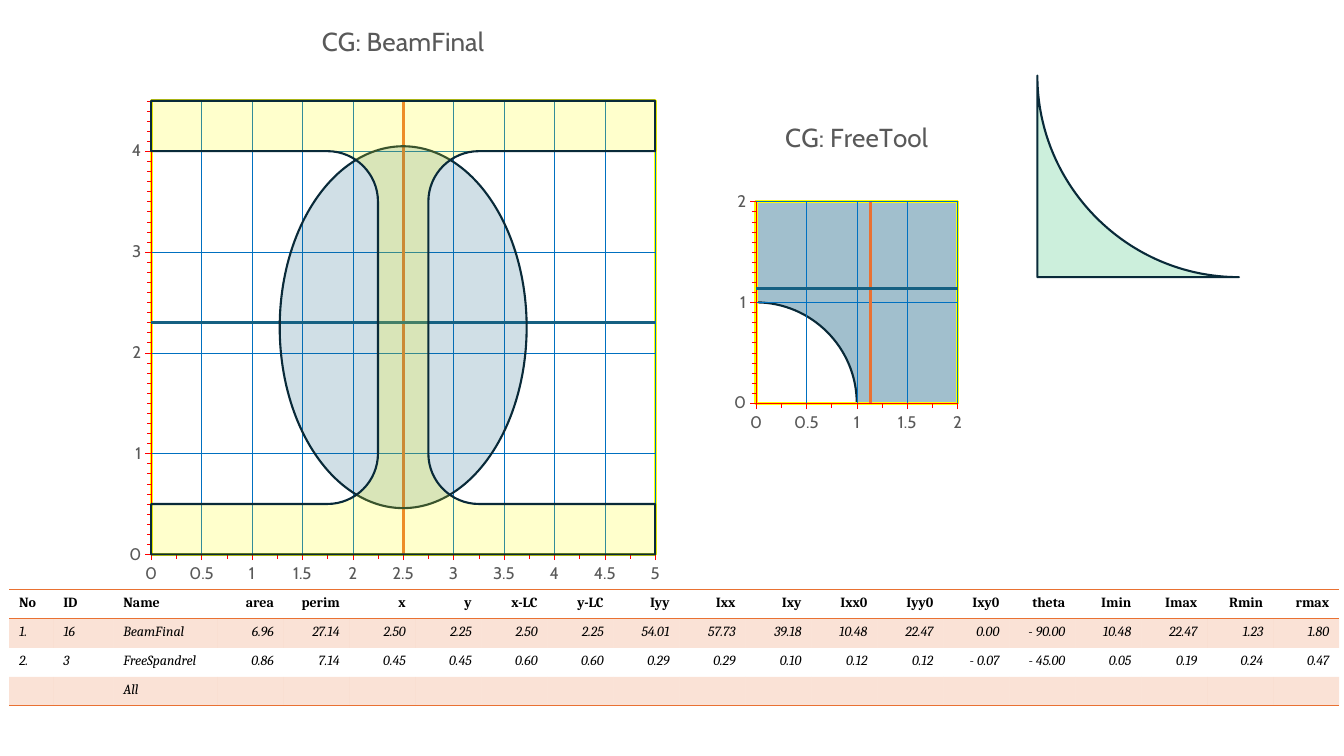
from dataclasses import dataclass
from typing import Any, NamedTuple

from lxml import etree
from pptx import Presentation
from pptx.chart.data import XyChartData
from pptx.dml.color import RGBColor
from pptx.enum.chart import XL_CHART_TYPE, XL_TICK_MARK
from pptx.enum.shapes import MSO_SHAPE
from pptx.enum.text import PP_ALIGN
from pptx.oxml import parse_xml
from pptx.oxml.ns import nsdecls, qn
from pptx.util import Pt

SCATTER = XL_CHART_TYPE.XY_SCATTER_LINES_NO_MARKERS
TICK_OUT = XL_TICK_MARK.OUTSIDE
ELLIPSE = MSO_SHAPE.OVAL
RIGHT = PP_ALIGN.RIGHT

UNIT = 72  # points per plotted unit, and the margin around each plot
ROUNDNESS = 0.55  # share of the way to the corner for a quarter circle's handles
TEAL, ORANGE, INK, GREY = "156082", "E97132", "092A39", "595959"
YELLOW, GREEN, BLUE, RED, BLACK = "FFFF00", "00B050", "0070C0", "FF0000", "000000"
NO_STYLE = "{2D5ABB26-0587-4C30-8999-92F81FD0307C}"


class Point(NamedTuple):
    x: float
    y: float


class Quarter(NamedTuple):
    """A quarter circle that ends at end and bends towards corner."""
    corner: Point
    end: Point


@dataclass
class Plot:
    title: str
    left: float
    top: float
    x_max: float
    y_max: float
    centroid: Point
    title_at: Point


@dataclass
class Outline:
    start: Point
    steps: list[Point | Quarter]
    color: str
    opacity: int


PLOTS = [
    Plot("CG: BeamFinal", 108, 72, 5, 4.5, Point(2.5, 2.3), Point(190.5, 13)),
    Plot("CG: FreeTool", 540, 144, 2, 2, Point(1.14, 1.14), Point(89.5, 9.5)),
]
OUTLINES = [
    Outline(Point(108, 72), [
        Point(468, 72), Point(468, 108), Point(342, 108),
        Quarter(Point(306, 108), Point(306, 144)), Point(306, 324),
        Quarter(Point(306, 360), Point(342, 360)), Point(468, 360),
        Point(468, 396), Point(108, 396), Point(108, 360), Point(234, 360),
        Quarter(Point(270, 360), Point(270, 324)), Point(270, 144),
        Quarter(Point(270, 108), Point(234, 108)), Point(108, 108),
    ], YELLOW, 20),
    Outline(Point(741, 54), [Quarter(Point(741, 198), Point(885, 198)), Point(741, 198)],
            GREEN, 20),
    Outline(Point(540, 144), [
        Point(684, 144), Point(684, 288), Point(612, 288),
        Quarter(Point(612, 216), Point(540, 216)),
    ], TEAL, 40),
]
COLUMN_WIDTHS = [31.5, 43, 74.7] + [47.12] * 17
TABLE_ROWS = [
    "No|ID|Name|area|perim|x|y|x-LC|y-LC|Iyy|Ixx|Ixy|Ixx0|Iyy0|Ixy0|theta|Imin|Imax|Rmin|rmax",
    "1.|16|BeamFinal|6.96|27.14|2.50|2.25|2.50|2.25|54.01|57.73|39.18|10.48|22.47|0.00|- 90.00"
    "|10.48|22.47|1.23|1.80",
    "2.|3|FreeSpandrel|0.86|7.14|0.45|0.45|0.60|0.60|0.29|0.29|0.10|0.12|0.12|- 0.07|- 45.00"
    "|0.05|0.19|0.24|0.47",
    "||All" + "|" * 17,
]
ROW_BORDERS = {0: ("lnT", "lnB"), 3: ("lnB",)}
TINTED_ROWS = (1, 3)


def rgb(color: str) -> RGBColor:
    return RGBColor.from_string(color)


def apply(target: Any, values: dict[str, Any]) -> None:
    for name, value in values.items():
        setattr(target, name, value)


def style_font(font: Any, color: str, **values: Any) -> None:
    apply(font, values)
    font.color.rgb = rgb(color)


def style_line(line: Any, color: str, width: float) -> None:
    line.color.rgb = rgb(color)
    line.width = Pt(width)


def style_fill(fill: Any, color: str, opacity: int, owner: Any) -> None:
    """Fill solidly; owner is the XML element that holds the fill."""
    fill.solid()
    fill.fore_color.rgb = rgb(color)
    tint = owner.find(qn("a:solidFill")).find(qn("a:srgbClr"))
    etree.SubElement(tint, qn("a:alpha"), val=str(opacity * 1000))


def style_shape(shape: Any, color: str, opacity: int) -> None:
    style_fill(shape.fill, color, opacity, shape._element.spPr)
    style_line(shape.line, INK, 1.5)
    shape.shadow.inherit = False


def toward(start: Point, corner: Point) -> Point:
    return Point(*(a + ROUNDNESS * (b - a) for a, b in zip(start, corner)))


def draw_outline(shapes: Any, outline: Outline) -> None:
    """Draw each quarter as three segments, then merge those into one curve."""
    vertices, curve_starts = [outline.start], []
    for step in outline.steps:
        if isinstance(step, Quarter):
            curve_starts.append(len(vertices) - 1)
            vertices += [toward(vertices[-1], step.corner), toward(step.end, step.corner), step.end]
        else:
            vertices.append(step)
    first, *rest = [(Pt(x), Pt(y)) for x, y in vertices]
    builder = shapes.build_freeform(*first)
    builder.add_line_segments(rest, close=True)
    shape = builder.convert_to_shape()
    segments = list(shape._element.iter(qn("a:lnTo")))
    for index in curve_starts:
        curve = etree.Element(qn("a:cubicBezTo"))
        segments[index].addprevious(curve)
        for segment in segments[index:index + 3]:
            curve.append(segment[0])
            segment.getparent().remove(segment)
    style_shape(shape, outline.color, outline.opacity)


def set_layout(parent: Any, index: int, **values: Any) -> None:
    """Place a chart part by hand, replacing any layout it has."""
    for layout in parent.findall(qn("c:layout")):
        parent.remove(layout)
    items = "".join(f'<c:{name} val="{value}"/>' for name, value in values.items())
    parent.insert(index, parse_xml(
        f'<c:layout {nsdecls("c")}><c:manualLayout>{items}</c:manualLayout></c:layout>'))


def clear_area(line: str) -> Any:
    return parse_xml(f'<c:spPr {nsdecls("c", "a")}><a:noFill/>{line}</c:spPr>')


def draw_plot(shapes: Any, plot: Plot) -> None:
    width, height = plot.x_max * UNIT + 2 * UNIT, plot.y_max * UNIT + 2 * UNIT
    center = plot.centroid
    data = XyChartData()
    lines = [[(x, center.y) for x in (0, center.x, plot.x_max)],
             [(center.x, y) for y in (0, center.y, plot.y_max)]]
    for number, points in enumerate(lines, 1):
        series = data.add_series(f"Series {number}")
        for x, y in points:
            series.add_data_point(x, y)
    chart = shapes.add_chart(SCATTER, Pt(plot.left - UNIT), Pt(plot.top - UNIT),
                             Pt(width), Pt(height), data).chart
    chart.has_legend = False
    style_font(chart.font, BLACK, name="Cabin", size=Pt(10))
    chart.plots[0].vary_by_categories = False
    for series, color in zip(chart.plots[0].series, (TEAL, ORANGE)):
        series.smooth = False
        style_line(series.format.line, color, 2.25)

    axes = [(chart.category_axis, plot.x_max, 0.5, 0.25), (chart.value_axis, plot.y_max, 1, 0.1)]
    for axis, maximum, major, minor in axes:
        apply(axis, {"minimum_scale": 0, "maximum_scale": maximum, "major_unit": major,
                     "minor_unit": minor, "major_tick_mark": TICK_OUT,
                     "minor_tick_mark": TICK_OUT, "has_major_gridlines": True})
        style_line(axis.format.line, RED, 0.25)
        style_line(axis.major_gridlines.format.line, BLUE, 0.25)
        style_font(axis.tick_labels.font, GREY, name="Cabin", size=Pt(12))

    title = chart.chart_title
    title.text_frame.text = plot.title
    span = title.text_frame.paragraphs[0].runs[0]
    style_font(span.font, GREY, name="Cabin", size=Pt(18.6), bold=False)
    set_layout(title._element, 1, xMode="edge", yMode="edge",
               x=plot.title_at.x / width, y=plot.title_at.y / height)

    space = chart._chartSpace
    area = space.chart.plotArea
    set_layout(area, 0, layoutTarget="inner", xMode="edge", yMode="edge", x=UNIT / width,
               y=UNIT / height, w=1 - 2 * UNIT / width, h=1 - 2 * UNIT / height)
    area.append(clear_area(f'<a:ln w="{Pt(2.25)}"><a:solidFill><a:srgbClr val="{YELLOW}"/>'
                           '</a:solidFill></a:ln>'))
    space.chart.addnext(clear_area("<a:ln><a:noFill/></a:ln>"))


def draw_table(shapes: Any) -> None:
    table = shapes.add_table(len(TABLE_ROWS), len(COLUMN_WIDTHS), Pt(6.48), Pt(421.2),
                             Pt(sum(COLUMN_WIDTHS)), Pt(20.75 * len(TABLE_ROWS))).table
    apply(table, {"first_row": False, "horz_banding": False})
    table._tbl.tblPr.find(qn("a:tableStyleId")).text = NO_STYLE
    for column, width in zip(table.columns, COLUMN_WIDTHS):
        column.width = Pt(width)
    for row, line in enumerate(TABLE_ROWS):
        for column, text in enumerate(line.split("|")):
            cell = table.cell(row, column)
            properties = cell._tc.get_or_add_tcPr()
            if row in TINTED_ROWS:
                style_fill(cell.fill, ORANGE, 20, properties)
            else:
                cell.fill.background()
            for index, side in enumerate(ROW_BORDERS.get(row, ())):
                properties.insert(index, parse_xml(
                    f'<a:{side} {nsdecls("a")} w="{Pt(1)}"><a:solidFill>'
                    f'<a:srgbClr val="{ORANGE}"/></a:solidFill></a:{side}>'))
            para = cell.text_frame.paragraphs[0]
            if column > 2:
                para.alignment = RIGHT
            if text:
                span = para.add_run()
                span.text = text
                style_font(span.font, BLACK, name="Cambria", size=Pt(10),
                           bold=row == 0, italic=row > 0)
            else:
                etree.SubElement(para._p, qn("a:endParaRPr"), sz="1000")


def main() -> None:
    deck = Presentation()
    apply(deck, {"slide_width": Pt(960), "slide_height": Pt(540)})
    page = deck.slides.add_slide(deck.slide_layouts[6])
    beam_plot, tool_plot = PLOTS
    group = page.shapes.add_group_shape()
    draw_plot(group.shapes, beam_plot)
    ellipse = group.shapes.add_shape(ELLIPSE, Pt(158.7), Pt(145.5), Pt(258.5), Pt(176.4))
    ellipse.rotation = 90
    style_shape(ellipse, TEAL, 20)
    draw_table(page.shapes)
    for outline in OUTLINES:
        draw_outline(page.shapes, outline)
    draw_plot(page.shapes, tool_plot)
    deck.save("out.pptx")


if __name__ == "__main__":
    main()
